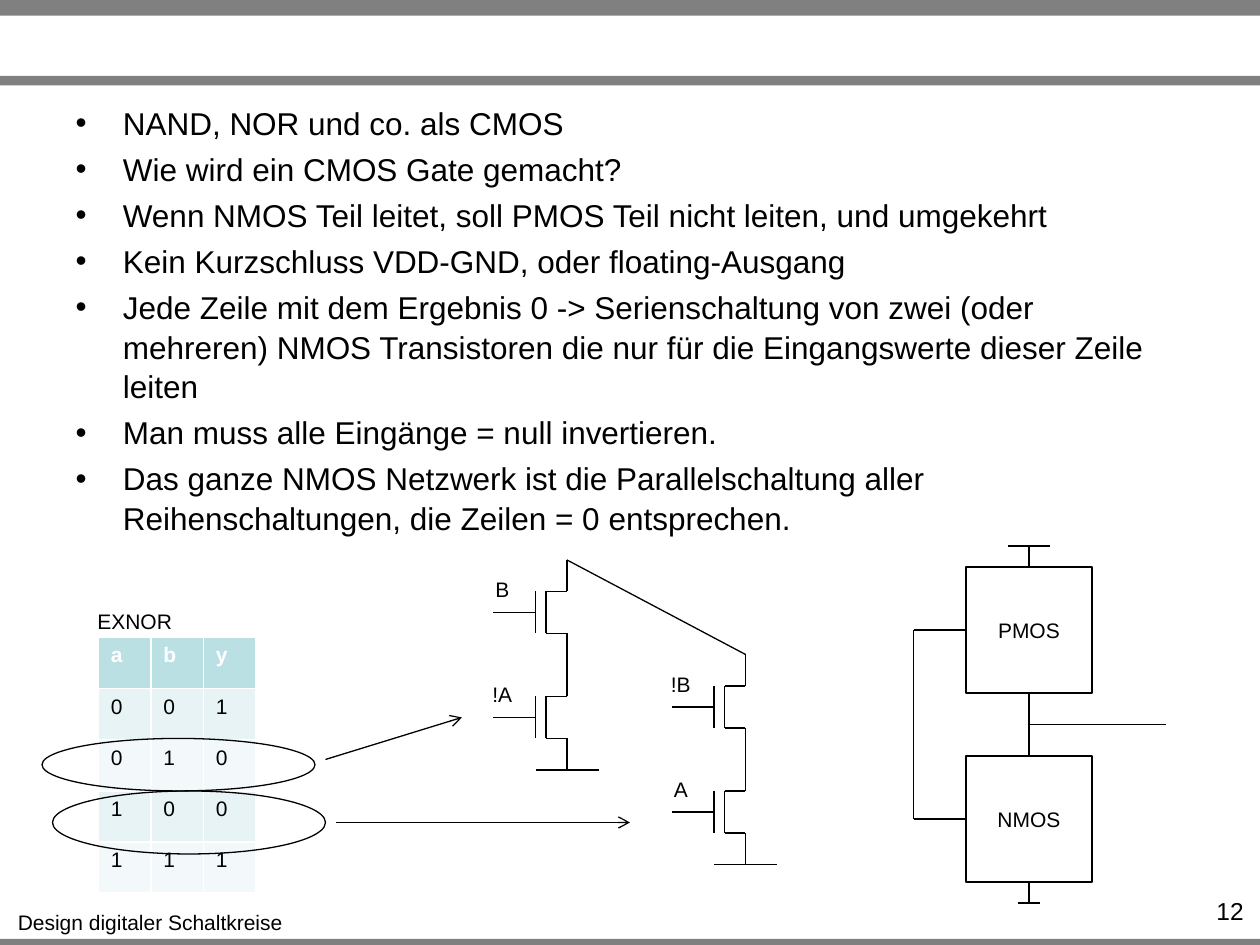
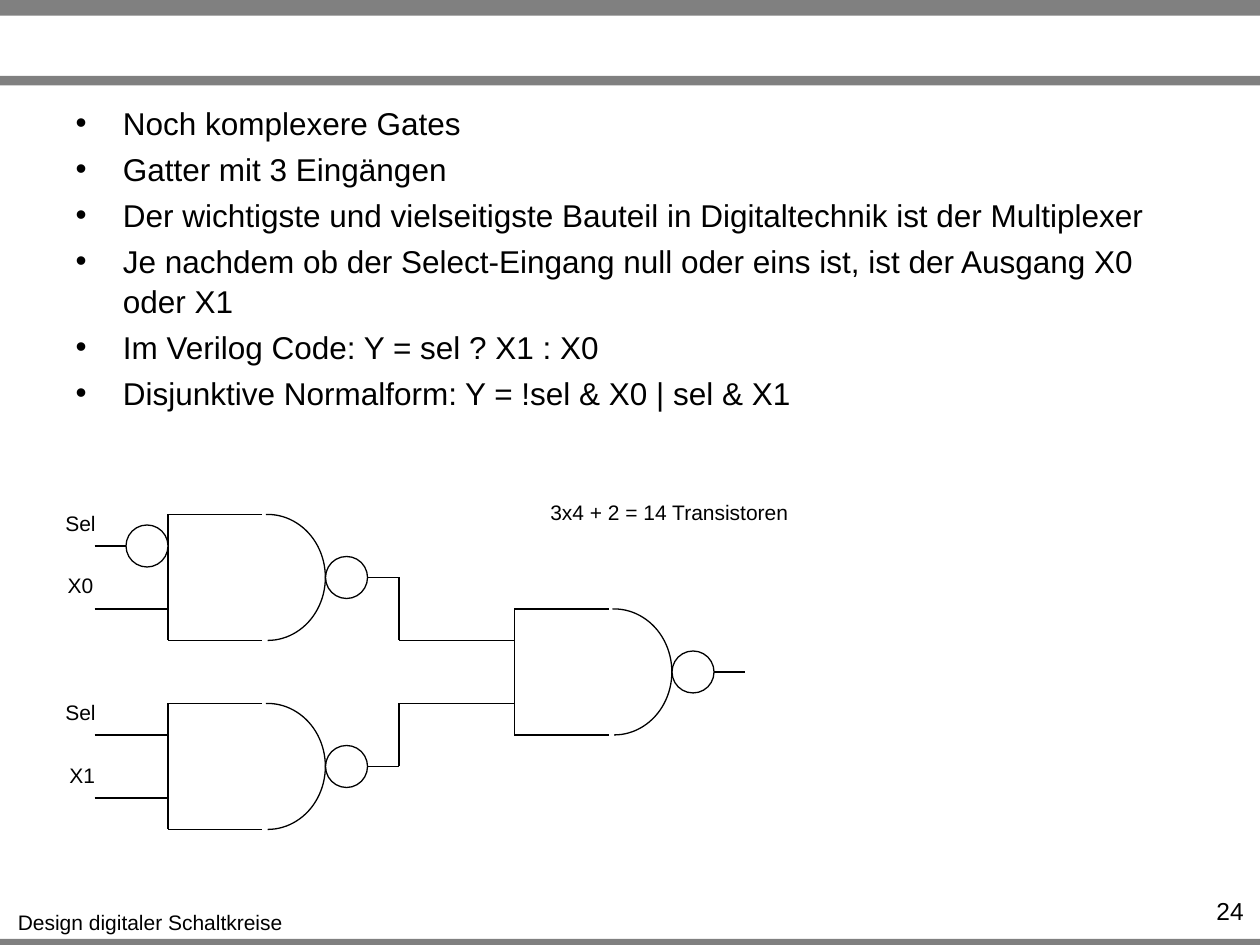
from dataclasses import dataclass

from lxml import etree
from pptx import Presentation
from pptx.dml.color import RGBColor
from pptx.enum.shapes import MSO_CONNECTOR, MSO_SHAPE
from pptx.enum.text import MSO_ANCHOR, MSO_AUTO_SIZE, PP_ALIGN
from pptx.oxml.ns import qn
from pptx.util import Pt

STRAIGHT = MSO_CONNECTOR.STRAIGHT
RECTANGLE, OVAL, ARC = MSO_SHAPE.RECTANGLE, MSO_SHAPE.OVAL, MSO_SHAPE.ARC
LEFT, CENTER, RIGHT = PP_ALIGN.LEFT, PP_ALIGN.CENTER, PP_ALIGN.RIGHT
MIDDLE, TOP = MSO_ANCHOR.MIDDLE, MSO_ANCHOR.TOP
NO_AUTOFIT = MSO_AUTO_SIZE.NONE
TOP_SIDE, LEFT_SIDE, BOTTOM_SIDE = 0, 1, 2


@dataclass(frozen=True)
class Theme:
    font: str = "Arial"
    ink: RGBColor = RGBColor(0, 0, 0)
    paper: RGBColor = RGBColor(255, 255, 255)
    band: RGBColor = RGBColor(0x80, 0x80, 0x80)
    table_head: RGBColor = RGBColor(0xBB, 0xE0, 0xE3)
    table_odd: RGBColor = RGBColor(0xE7, 0xF3, 0xF4)
    table_even: RGBColor = RGBColor(0xF3, 0xF9, 0xFA)
    body_size: Pt = Pt(18)
    number_size: Pt = Pt(14)
    label_size: Pt = Pt(12)
    line_width: Pt = Pt(0.75)


theme = Theme()


def add_wire(shapes, x1, y1, x2, y2, arrow=False):
    wire = shapes.add_connector(STRAIGHT, Pt(x1), Pt(y1), Pt(x2), Pt(y2))
    wire.line.color.rgb = theme.ink
    wire.line.width = theme.line_width
    properties = wire.line._get_or_add_ln()
    if arrow:
        etree.SubElement(properties, qn("a:tailEnd"), type="arrow")
    properties.addnext(etree.Element(qn("a:effectLst")))
    return wire


def add_outline(shapes, kind, left, top, width, height, fill=None):
    outline = shapes.add_shape(kind, Pt(left), Pt(top), Pt(width), Pt(height))
    outline.shadow.inherit = False
    outline.line.color.rgb = theme.ink
    outline.line.width = theme.line_width
    if fill is None:
        outline.fill.background()
    else:
        outline.fill.solid()
        outline.fill.fore_color.rgb = fill
    return outline


deck = Presentation()
deck.slide_width, deck.slide_height = Pt(720), Pt(540)

contents = [
    {
        "number": "12",
        "body_height": 114,
        "bullets": [
            "NAND, NOR und co. als CMOS",
            "Wie wird ein CMOS Gate gemacht?",
            "Wenn NMOS Teil leitet, soll PMOS Teil nicht leiten, und umgekehrt",
            "Kein Kurzschluss VDD-GND, oder floating-Ausgang",
            "Jede Zeile mit dem Ergebnis 0 -> Serienschaltung von zwei (oder mehreren) "
            "NMOS Transistoren die nur für die Eingangswerte dieser Zeile leiten",
            "Man muss alle Eingänge = null invertieren.",
            "Das ganze NMOS Netzwerk ist die Parallelschaltung aller Reihenschaltungen, "
            "die Zeilen = 0 entsprechen.",
        ],
        "labels": [
            ("EXNOR", 48, 344, 58),
            ("B", 276, 326, 22),
            ("!A", 274, 386, 26),
            ("!B", 376, 380, 26),
            ("A", 378, 440, 22),
        ],
    },
    {
        "number": "24",
        "body_height": 53,
        "bullets": [
            "Noch komplexere Gates",
            "Gatter mit 3 Eingängen",
            "Der wichtigste und vielseitigste Bauteil in Digitaltechnik ist der Multiplexer",
            "Je nachdem ob der Select-Eingang null oder eins ist, ist der Ausgang X0 oder X1",
            "Im Verilog Code: Y = sel ? X1 : X0",
            "Disjunktive Normalform: Y = !sel & X0 | sel & X1",
        ],
        "labels": [
            ("Sel", 30, 288, 32),
            ("X0", 31.5, 323.5, 29),
            ("Sel", 30, 396, 32),
            ("X1", 32.5, 432, 29),
            ("3x4 + 2 = 14 Transistoren", 305, 282, 155),
        ],
    },
]

pages = []
for content in contents:
    page = deck.slides.add_slide(deck.slide_layouts[1])
    pages.append(page)
    title = page.shapes.title
    title.element.getparent().remove(title.element)

    for top, height in ((536.5, 5.5), (0, 9), (43.4, 5.4)):
        band = add_outline(page.shapes, RECTANGLE, 0, top, 720, height, theme.band)
        band.line.fill.background()

    body = page.placeholders[1]
    body.left, body.top = Pt(36), Pt(54.7)
    body.width, body.height = Pt(648), Pt(content["body_height"])
    frame = body.text_frame
    frame.text = "\n".join(content["bullets"])
    frame.auto_size = NO_AUTOFIT
    frame.vertical_anchor = TOP
    for index, para in enumerate(frame.paragraphs):
        properties = para._p.get_or_add_pPr()
        properties.set("marL", str(Pt(27)))
        properties.set("indent", str(Pt(-27)))
        etree.SubElement(properties, qn("a:buChar"), char="•")
        para.space_before = Pt(3.6 if index else 0)
        para.line_spacing = 1.05
        para.font.name = theme.font
        para.font.size = theme.body_size
        para.font.color.rgb = theme.ink

    texts = [(*label, CENTER, theme.label_size) for label in content["labels"]]
    texts.append(("Design digitaler Schaltkreise", 2.4, 516.2, 167, CENTER, theme.label_size))
    texts.append((content["number"], 655.2, 508.3, 62.6, RIGHT, theme.number_size))
    for text, left, top, width, alignment, size in texts:
        box = page.shapes.add_textbox(Pt(left), Pt(top), Pt(width), Pt(21.6))
        box.text_frame.text = text
        box.text_frame.word_wrap = alignment == RIGHT
        para = box.text_frame.paragraphs[0]
        para.alignment = alignment
        para.font.name = theme.font
        para.font.size = size
        para.font.color.rgb = theme.ink

cmos_page, mux_page = pages

truth_rows = ["aby", "001", "010", "100", "111"]
truth_table = cmos_page.shapes.add_table(5, 3, Pt(56.2), Pt(364.3), Pt(90), Pt(146)).table
for column in truth_table.columns:
    column.width = Pt(30)
for row_index, values in enumerate(truth_rows):
    truth_table.rows[row_index].height = Pt(29.2)
    is_head = row_index == 0
    row_fill = theme.table_odd if row_index % 2 else theme.table_even
    for column_index, value in enumerate(values):
        cell = truth_table.cell(row_index, column_index)
        cell.text = value
        cell.fill.solid()
        cell.fill.fore_color.rgb = theme.table_head if is_head else row_fill
        para = cell.text_frame.paragraphs[0]
        para.alignment = LEFT
        para.font.name = theme.font
        para.font.size = theme.label_size
        para.font.bold = is_head
        para.font.color.rgb = theme.paper if is_head else theme.ink

shapes = cmos_page.shapes
add_outline(shapes, OVAL, 24, 422, 156, 30)
add_outline(shapes, OVAL, 30, 452, 156, 36)
add_wire(shapes, 186, 434, 264, 410, arrow=True)
add_wire(shapes, 192, 470, 360, 470, arrow=True)

transistor_wires = [
    (0, 0, 0, 18),
    (0, 18, -12, 18),
    (-12, 18, -12, 42),
    (0, 42, -12, 42),
    (0, 42, 0, 60),
    (-18, 18, -18, 42),
    (-30, 30, -18, 30),
    (-42, 30, -30, 30),
]
for drain_x, chain_top in ((324, 320), (426, 374)):
    for drain_y in (chain_top, chain_top + 60):
        transistor = shapes.add_group_shape()
        for x1, y1, x2, y2 in transistor_wires:
            add_wire(transistor.shapes, drain_x + x1, drain_y + y1, drain_x + x2, drain_y + y2)
    add_wire(shapes, drain_x - 18, chain_top + 120, drain_x + 18, chain_top + 120)
add_wire(shapes, 324, 320, 426, 374)

networks = []
for name, top in (("PMOS", 324), ("NMOS", 432)):
    network = add_outline(shapes, RECTANGLE, 552, top, 72, 72)
    network.text_frame.text = name
    network.text_frame.vertical_anchor = MIDDLE
    para = network.text_frame.paragraphs[0]
    para.alignment = CENTER
    para.font.name = theme.font
    para.font.size = theme.label_size
    para.font.color.rgb = theme.ink
    add_wire(shapes, 522, top + 36, 552, top + 36).end_connect(network, LEFT_SIDE)
    networks.append(network)
pmos, nmos = networks
output_node = add_wire(shapes, 588, 396, 588, 432)
output_node.begin_connect(pmos, BOTTOM_SIDE)
output_node.end_connect(nmos, TOP_SIDE)
add_wire(shapes, 588, 414, 666, 414)
add_wire(shapes, 522, 360, 522, 468)
add_wire(shapes, 588, 312, 588, 324).end_connect(pmos, TOP_SIDE)
add_wire(shapes, 576, 312, 600, 312)
add_wire(shapes, 588, 504, 588, 516).begin_connect(nmos, BOTTOM_SIDE)
add_wire(shapes, 582, 516, 594, 516)

shapes = mux_page.shapes
for left, top, input_x in ((96, 294, 54), (96, 402, 54), (294, 348, 228)):
    for input_y in (top + 18, top + 54):
        add_wire(shapes, input_x, input_y, left, input_y)
    add_wire(shapes, left, top, left, top + 72)
    for edge_y in (top, top + 72):
        add_wire(shapes, left, edge_y, left + 54, edge_y)
    curve = add_outline(shapes, ARC, left + 24, top, 66, 72)
    curve.adjustments[0] = 161.1
    curve.adjustments[1] = 54
    add_wire(shapes, left + 90, top + 36, left + 132, top + 36)
    add_outline(shapes, OVAL, left + 90, top + 24, 24, 24, theme.paper)
add_outline(shapes, OVAL, 72, 300, 24, 24, theme.paper)
add_wire(shapes, 228, 330, 228, 366)
add_wire(shapes, 228, 402, 228, 438)

deck.save("out.pptx")
